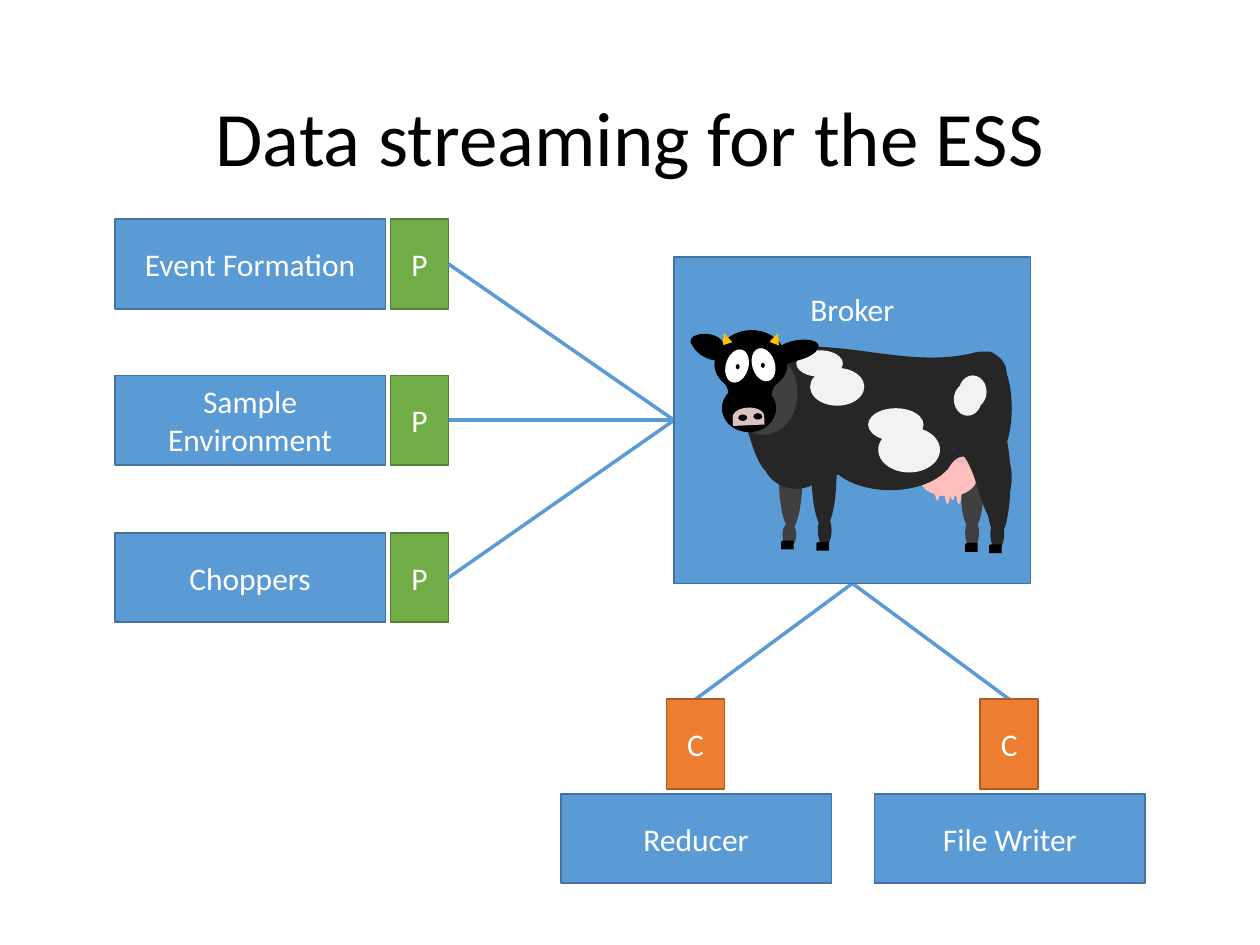
import lxml.etree
import pptx
import pptx.util
import pptx.dml.color
import pptx.enum.shapes
import pptx.enum.text
import pptx.oxml.ns

PX = 9144  # EMU; 100 px to the inch
KIND = pptx.enum.shapes.MSO_SHAPE
ANCHOR = pptx.enum.text.MSO_ANCHOR

BLUE, BLUE_EDGE = "5B9BD5", "43739E"
GREEN, GREEN_EDGE = "70AD47", "538035"
ORANGE, ORANGE_EDGE = "ED7D31", "AF5C24"
BLACK, WHITE = "000000", "FFFFFF"
HIDE, SHADE, PATCH, PINK = "262626", "404040", "F2F2F2", "FFBFBD"
HORN, MUZZLE = "FFC000", "DBC2BF"

TITLE = "Data streaming for the ESS"
PRODUCERS = ["Event Formation", "Sample Environment", "Choppers"]
CONSUMERS = ["Reducer", "File Writer"]
BROKER = "Broker"

BOX_W, BOX_H, TAG_W, GAP = 215, 71, 46, 4
STEP = 249  # consumers one step apart, producers half a step
BROKER_FRAME = (535, 204, 283, 259)

OVAL, WAVE, RECT = KIND.OVAL, KIND.WAVE, KIND.RECTANGLE
HOOF, EXTRACT = KIND.SNIP_1_RECTANGLE, KIND.FLOWCHART_EXTRACT

# Parts of the cow from back to front: kind, frame, colour, extra format
COW = [
    # far legs and udder
    (OVAL, (618, 330, 19, 90), SHADE, {}),
    (OVAL, (763, 370, 17, 50), SHADE, {}),
    (OVAL, (730, 366, 45, 28), PINK, {}),
    (OVAL, (759, 385, 4, 15), PINK, {}),
    (OVAL, (750, 385, 4, 15), PINK, {}),
    (OVAL, (742, 382, 4, 15), PINK, {}),
    (OVAL, (754, 382, 4, 15), PINK, {}),
    (OVAL, (754, 360, 16, 20), PINK, {"alpha": 89}),
    # body
    (RECT, (613, 284, 178, 73), HIDE, {}),
    (RECT, (614, 300, 125, 77), HIDE, {}),
    (OVAL, (761, 279, 38, 34), HIDE, {}),
    (OVAL, (765, 279, 38, 90), HIDE, {}),
    (OVAL, (782, 336, 20, 90), HIDE, {}),
    (OVAL, (776, 354, 27, 50), HIDE, {}),
    (OVAL, (656, 330, 101, 59), HIDE, {}),
    (WAVE, (607, 275, 168, 36), HIDE, {"flip": "HV"}),
    (OVAL, (605, 338, 54, 50), HIDE, {}),
    # legs and hooves
    (OVAL, (644, 329, 20, 90), HIDE, {}),
    (OVAL, (621, 415, 11, 19), SHADE, {}),
    (OVAL, (649, 409, 11, 24), HIDE, {}),
    (OVAL, (786, 412, 11, 24), HIDE, {}),
    (HOOF, (785, 432, 10, 7), BLACK, {"flip": "H"}),
    (HOOF, (648, 430, 10, 7), BLACK, {"flip": "H"}),
    (HOOF, (620, 429, 10, 7), BLACK, {"flip": "H"}),
    (WAVE, (749, 379, 64, 14), HIDE, {"flip": "HV", "turn": 65.3}),
    (KIND.MOON, (752, 351, 26, 23), HIDE, {"flip": "H", "turn": 279.5}),
    (OVAL, (766, 411, 11, 24), SHADE, {}),
    (WAVE, (567, 340, 64, 11), HIDE, {"flip": "HV", "turn": 66.4, "skew": -0.03}),
    (OVAL, (601, 338, 18, 19), HIDE, {}),
    # patches and neck
    (OVAL, (761, 298, 22, 26), PATCH, {}),
    (OVAL, (697, 339, 49, 36), PATCH, {}),
    (OVAL, (689, 324, 44, 26), PATCH, {}),
    (OVAL, (757, 304, 22, 26), PATCH, {}),
    (HOOF, (766, 431, 10, 7), BLACK, {"flip": "H"}),
    (OVAL, (579, 279, 54, 66), SHADE, {}),
    (OVAL, (643, 292, 43, 30), PATCH, {}),
    (OVAL, (632, 278, 37, 21), PATCH, {}),
    # head
    (WAVE, (614, 277, 34, 11), BLACK, {"turn": 152.6}),
    (OVAL, (567, 268, 58, 43), BLACK, {}),
    (OVAL, (570, 262, 53, 43), BLACK, {}),
    (OVAL, (573, 305, 43, 38), BLACK, {}),
    (WAVE, (585, 308, 39, 21), BLACK, {"flip": "H", "turn": 289.3}),
    (WAVE, (567, 306, 39, 21), BLACK, {"turn": 67.4, "skew": -0.03}),
    (EXTRACT, (612, 264, 8, 9), HORN, {"turn": 20.7}),
    (EXTRACT, (572, 264, 8, 9), HORN, {"turn": 341.7}),
    # eyes, muzzle and ears
    (OVAL, (576, 277, 18, 27), WHITE, {"turn": 16.8}),
    (OVAL, (597, 276, 18, 27), WHITE, {"turn": 342.2}),
    (OVAL, (604, 288, 3, 4), BLACK, {}),
    (OVAL, (584, 289, 3, 4), BLACK, {}),
    (KIND.FLOWCHART_DELAY, (587, 318, 14, 25), MUZZLE, {"flip": "H", "turn": 87.3}),
    (OVAL, (598, 328, 7, 5), BLACK, {}),
    (OVAL, (586, 329, 7, 5), BLACK, {}),
    (OVAL, (616, 270, 34, 14), BLACK, {"turn": 350.6}),
    (OVAL, (548, 265, 26, 14), BLACK, {"turn": 6.9}),
    (OVAL, (548, 270, 28, 14), BLACK, {"turn": 28.6}),
]


def emu(*lengths):
    return [round(length * PX) for length in lengths]


def rgb(color):
    return pptx.dml.color.RGBColor.from_string(color)


def write(shape, text, size=18, color=WHITE, anchor=ANCHOR.MIDDLE, spacing=1.0):
    frame = shape.text_frame
    frame.word_wrap = True
    frame.vertical_anchor = anchor
    para = frame.paragraphs[0]
    para.alignment = pptx.enum.text.PP_ALIGN.CENTER
    para.line_spacing = spacing
    span = para.add_run()
    span.text = text
    span.font.name = "Calibri"
    span.font.size = pptx.util.Pt(size)
    span.font.color.rgb = rgb(color)


def add_shape(shapes, kind, frame, fill, edge=None):
    shape = shapes.add_shape(kind, *emu(*frame))
    shape.shadow.inherit = False
    shape.fill.solid()
    shape.fill.fore_color.rgb = rgb(fill)
    if edge:
        shape.line.color.rgb = rgb(edge)
        shape.line.width = pptx.util.Pt(1)
    else:
        shape.line.fill.background()
    return shape


def add_box(page, text, frame, fill=BLUE, edge=BLUE_EDGE):
    write(add_shape(page.shapes, RECT, frame, fill, edge), text)


def add_link(page, start, end):
    link = page.shapes.add_connector(
        pptx.enum.shapes.MSO_CONNECTOR.STRAIGHT, *emu(*start, *end))
    link.line.color.rgb = rgb(BLUE)
    link.line.width = pptx.util.Pt(2)
    lxml.etree.SubElement(link.element.spPr, pptx.oxml.ns.qn("a:effectLst"))


def add_cow(page):
    cow = page.shapes.add_group_shape()
    for kind, frame, color, extra in COW:
        part = add_shape(cow.shapes, kind, frame, color)
        part.rotation = extra.get("turn", 0)
        for axis in extra.get("flip", ""):
            part.element.spPr.xfrm.set("flip" + axis, "1")
        if "skew" in extra:
            part.adjustments[1] = extra["skew"]
        if "alpha" in extra:
            tint = part.element.spPr.find(".//" + pptx.oxml.ns.qn("a:srgbClr"))
            alpha = lxml.etree.SubElement(tint, pptx.oxml.ns.qn("a:alpha"))
            alpha.set("val", str(extra["alpha"] * 1000))


def main():
    deck = pptx.Presentation()
    deck.slide_width, deck.slide_height = emu(1000, 750)
    page = deck.slides.add_slide(deck.slide_layouts[6])

    title = page.shapes.add_textbox(*emu(69, 40, 862, 145))
    write(title, TITLE, size=44, color=BLACK, spacing=0.9)

    left, top, width, height = BROKER_FRAME
    for index, name in enumerate(PRODUCERS):
        x, y = 91, 174 + index * STEP // 2
        tag_x = x + BOX_W + GAP
        add_box(page, name, (x, y, BOX_W, BOX_H))
        add_box(page, "P", (tag_x, y, TAG_W, BOX_H), GREEN, GREEN_EDGE)
        add_link(page, (tag_x + TAG_W, y + BOX_H / 2), (left, top + height / 2))

    for index, name in enumerate(CONSUMERS):
        x, y = 445 + index * STEP, 555
        tag_x = x + (BOX_W - TAG_W) // 2
        add_link(page, (tag_x + TAG_W / 2, y), (left + width / 2, top + height))
        add_box(page, name, (x, y + BOX_H + GAP, BOX_W, BOX_H))
        add_box(page, "C", (tag_x, y, TAG_W, BOX_H), ORANGE, ORANGE_EDGE)

    broker = add_shape(page.shapes, RECT, BROKER_FRAME, BLUE, BLUE_EDGE)
    broker.text_frame.margin_top = 26 * PX
    write(broker, BROKER, anchor=ANCHOR.TOP)
    add_cow(page)

    deck.save("out.pptx")


if __name__ == "__main__":
    main()
